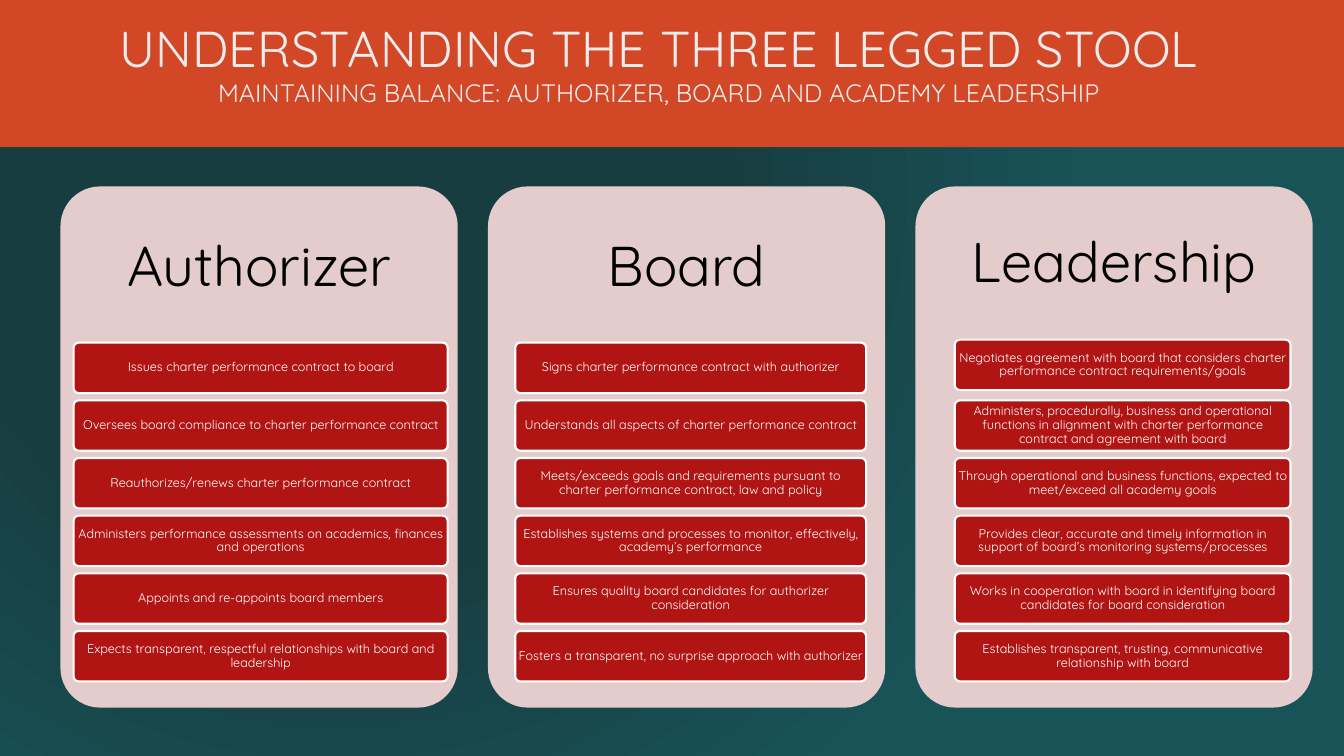
from pptx import Presentation
from pptx.dml.color import RGBColor
from pptx.enum.shapes import MSO_SHAPE
from pptx.enum.text import MSO_ANCHOR, MSO_AUTO_SIZE, PP_ALIGN
from pptx.oxml import parse_xml
from pptx.oxml.ns import nsdecls, qn
from pptx.util import Inches, Pt

RECT, ROUNDED = MSO_SHAPE.RECTANGLE, MSO_SHAPE.ROUNDED_RECTANGLE
TOP, MIDDLE = MSO_ANCHOR.TOP, MSO_ANCHOR.MIDDLE
CENTER = PP_ALIGN.CENTER
NO_AUTOFIT = MSO_AUTO_SIZE.NONE

FONT = "Quicksand"
COLORS = {
    "bg_dark": "173D40",
    "bg_light": "185358",
    "banner": "D24726",
    "title": "EBEBEB",
    "card": "E4CCCC",
    "heading": "000000",
    "duty": "B01513",
    "white": "FFFFFF",
}

TITLE_LINES = [
    ("UNDERSTANDING THE THREE LEGGED STOOL", 36),
    ("MAINTAINING BALANCE: AUTHORIZER, BOARD AND ACADEMY LEADERSHIP", 18),
]

CARD_LEFT, CARD_TOP, CARD_PITCH = 0.6, 1.85, 4.24
CARD_WIDTH, CARD_HEIGHT = 3.94, 5.17
DUTY_HEIGHT = 0.5
FIRST_DUTY, LAST_DUTY = 1.55, 4.41

CARDS = [
    {
        "heading": "Authorizer", "spacing": 1, "indent": 0.13, "width": 3.71, "raise": 0,
        "duties": [
            "Issues charter performance contract to board",
            "Oversees board compliance to charter performance contract",
            "Reauthorizes/renews charter performance contract",
            "Administers performance assessments on academics, finances and operations",
            "Appoints and re-appoints board members",
            "Expects transparent, respectful relationships with board and leadership",
        ],
    },
    {
        "heading": "Board", "spacing": 1, "indent": 0.27, "width": 3.48, "raise": 0,
        "duties": [
            "Signs charter performance contract with authorizer",
            "Understands all aspects of charter performance contract",
            "Meets/exceeds goals and requirements pursuant to charter performance contract, law and policy",
            "Establishes systems and processes to monitor, effectively, academy’s performance",
            "Ensures quality board candidates for authorizer consideration",
            "Fosters a transparent, no surprise approach with authorizer",
        ],
    },
    {
        "heading": "Leadership", "spacing": 0.9, "indent": 0.39, "width": 3.33, "raise": 0.03,
        "duties": [
            "Negotiates agreement with board that considers charter performance contract requirements/goals",
            "Administers, procedurally, business and operational functions in alignment with charter performance contract and agreement with board",
            "Through operational and business functions, expected to meet/exceed all academy goals",
            "Provides clear, accurate and timely information in support of board’s monitoring systems/processes",
            "Works in cooperation with board in identifying board candidates for board consideration",
            "Establishes transparent, trusting, communicative relationship with board",
        ],
    },
]


def rgb(name):
    return RGBColor.from_string(COLORS[name])


def add_box(slide, kind, box, fill, line=None):
    sp = slide.shapes.add_shape(kind, *map(Inches, box))
    sp.shadow.inherit = False
    sp.fill.solid()
    sp.fill.fore_color.rgb = rgb(fill)
    if line:
        sp.line.color.rgb = rgb(line)
        sp.line.width = Pt(1.5)
    else:
        sp.line.fill.background()
    if kind == ROUNDED:
        sp.adjustments[0] = 0.1
    return sp


def format_frame(tf, anchor, insets):
    sides = ("margin_left", "margin_top", "margin_right", "margin_bottom")
    values = dict(zip(sides, map(Inches, insets)))
    values.update(word_wrap=True, auto_size=NO_AUTOFIT, vertical_anchor=anchor)
    for name, value in values.items():
        setattr(tf, name, value)


def write(p, text, size, color, spacing=1):
    for name, value in {"alignment": CENTER, "line_spacing": spacing}.items():
        setattr(p, name, value)
    r = p.add_run()
    r.text = text
    for name, value in {"name": FONT, "size": Pt(size)}.items():
        setattr(r.font, name, value)
    r.font.color.rgb = rgb(color)


def set_background(slide):
    fill = slide.background.fill
    fill.gradient()
    stops = fill.gradient_stops
    for stop, name, position in zip(stops, ("bg_dark", "bg_light"), (0.48, 1)):
        stop.color.rgb = rgb(name)
        stop.position = position
    lin = slide.element.find(".//" + qn("a:lin"))
    circle = parse_xml(
        f'<a:path {nsdecls("a")} path="circle">'
        '<a:fillToRect l="50000" t="50000" r="100000" b="100000"/></a:path>'
    )
    lin.getparent().replace(lin, circle)


def add_banner(slide, box):
    x, y, w, h = box
    banner = add_box(slide, RECT, box, "banner")
    title = slide.shapes.title
    title.element.addprevious(banner.element)
    title.left, title.top = Inches(x + 0.05), Inches(y + 0.12)
    title.width, title.height = Inches(w - 0.36), Inches(h - 0.15)
    tf = title.text_frame
    format_frame(tf, TOP, (0.1, 0.05, 0.1, 0.05))
    for i, (text, size) in enumerate(TITLE_LINES):
        p = tf.add_paragraph() if i else tf.paragraphs[0]
        write(p, text, size, "title")


def add_card(slide, box, card):
    x, y, w, h = box
    sp = add_box(slide, ROUNDED, box, "card")
    format_frame(sp.text_frame, MIDDLE, (0.08, 0.08, 0.08, 3.7))
    write(sp.text_frame.paragraphs[0], card["heading"], 40, "heading", card["spacing"])
    pitch = (LAST_DUTY - FIRST_DUTY) / (len(card["duties"]) - 1)
    for i, duty in enumerate(card["duties"]):
        top = y + FIRST_DUTY + i * pitch - (0 if i else card["raise"])
        row = (x + card["indent"], top, card["width"], DUTY_HEIGHT)
        sp = add_box(slide, ROUNDED, row, "duty", "white")
        format_frame(sp.text_frame, MIDDLE, (0.02, 0.02, 0.02, 0.02))
        write(sp.text_frame.paragraphs[0], duty, 9, "white", 0.9)


def main():
    prs = Presentation()
    prs.slide_width, prs.slide_height = Inches(13.33), Inches(7.5)
    slide = prs.slides.add_slide(prs.slide_layouts[5])
    set_background(slide)
    add_banner(slide, (0, 0, 13.33, 1.46))
    for i, card in enumerate(CARDS):
        x = CARD_LEFT + i * CARD_PITCH
        add_card(slide, (x, CARD_TOP, CARD_WIDTH, CARD_HEIGHT), card)
    prs.save("out.pptx")


if __name__ == "__main__":
    main()
